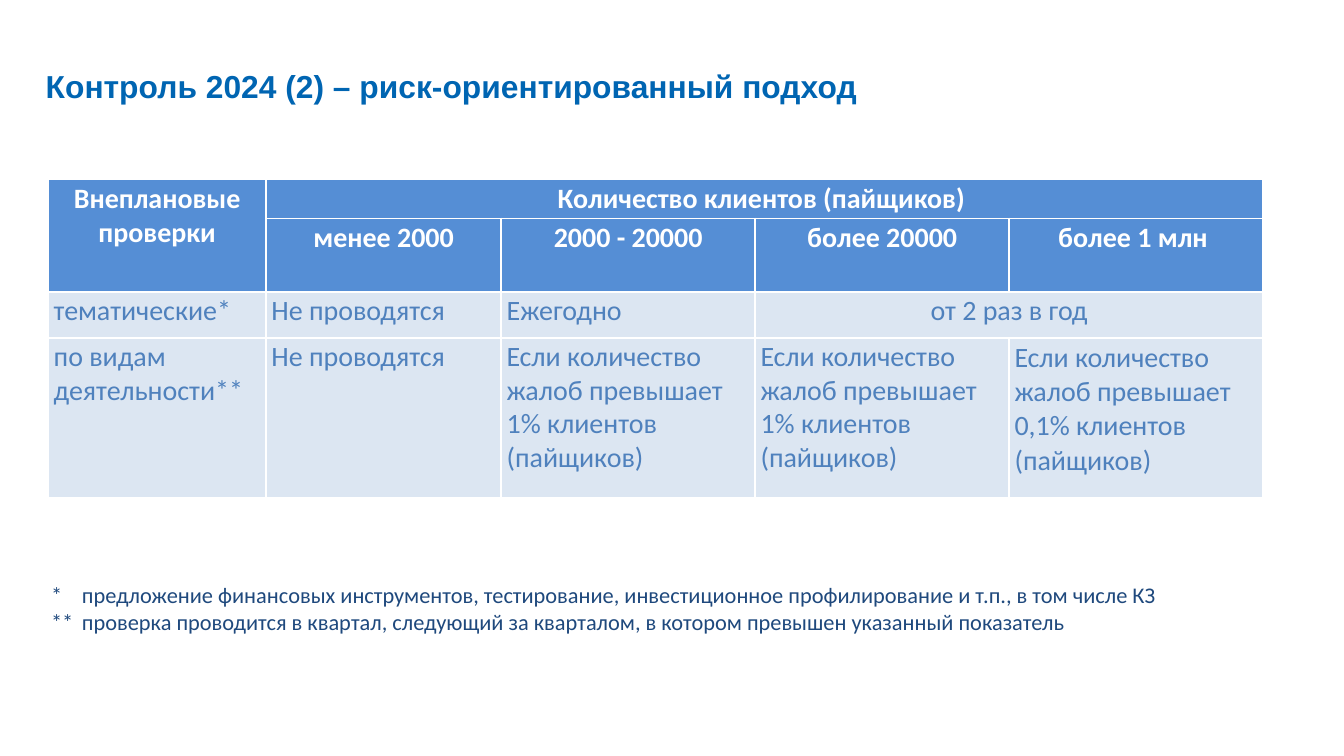
from dataclasses import dataclass

from lxml import etree
from pptx import Presentation
from pptx import util as u
from pptx.dml.color import RGBColor
from pptx.enum import text
from pptx.oxml import ns


@dataclass(frozen=True)
class Theme:
    title_font: str = "Arial"
    body_font: str = "Calibri"
    title_size: int = 17
    table_size: int = 15
    note_size: int = 12
    line_spacing: int = 18
    title_color: str = "0065B2"
    header_text: str = "FFFFFF"
    header_fill: str = "558ED5"
    body_text: str = "4F81BD"
    body_fill: str = "DCE6F2"
    border: str = "FFFFFF"
    note_color: str = "1F497D"


THEME = Theme()
COLUMNS = [1.62, 1.75, 1.89, 1.89, 1.89]
ROWS = [0.26, 0.31, 0.34, 1.19]
HEADER_ROWS = 2
COMPLAINTS = "Если количество жалоб превышает {} клиентов (пайщиков)"
CELLS = [
    ["Внеплановые проверки", "Количество клиентов (пайщиков) ", "", "", ""],
    ["", "менее 2000", "2000 - 20000", "более 20000", "более 1 млн "],
    ["тематические*", "Не проводятся", "Ежегодно", "от 2 раз в год", ""],
    ["по видам деятельности**", "Не проводятся", COMPLAINTS.format("1%"),
     COMPLAINTS.format("1%"), COMPLAINTS.format("0,1%")],
]
MERGES = [((0, 0), (1, 0)), ((0, 1), (0, 4)), ((2, 3), (2, 4))]
CENTERED_BODY = (2, 3)
NATURAL_SPACING = (3, 4)
NOTES = [
    "*\tпредложение финансовых инструментов, тестирование, инвестиционное "
    "профилирование и т.п., в том числе КЗ",
    "**\tпроверка проводится в квартал, следующий за кварталом, в котором "
    "превышен указанный показатель",
]


def style_runs(para, font, size, color, bold=False):
    for span in para.runs:
        span.font.name = font
        span.font.size = u.Pt(size)
        span.font.bold = bold
        span.font.color.rgb = RGBColor.from_string(color)


def add_title(page, title):
    box = page.shapes.title
    box.left, box.top = u.Inches(0.24), u.Inches(0.45)
    box.width, box.height = u.Inches(9.15), u.Inches(0.42)
    frame = box.text_frame
    frame.text = title
    frame.vertical_anchor = text.MSO_ANCHOR.TOP
    para = frame.paragraphs[0]
    para.alignment = text.PP_ALIGN.LEFT
    style_runs(para, THEME.title_font, THEME.title_size, THEME.title_color, True)


def set_borders(cell):
    properties = cell._tc.get_or_add_tcPr()
    for side in ("a:lnL", "a:lnR", "a:lnT", "a:lnB"):
        line = etree.SubElement(properties, ns.qn(side), w=str(u.Pt(1)))
        fill = etree.SubElement(line, ns.qn("a:solidFill"))
        etree.SubElement(fill, ns.qn("a:srgbClr"), val=THEME.border)


def format_cell(cell, row, column):
    header = row < HEADER_ROWS
    set_borders(cell)
    cell.fill.solid()
    cell.fill.fore_color.rgb = RGBColor.from_string(
        THEME.header_fill if header else THEME.body_fill)
    cell.margin_left = cell.margin_right = u.Inches(0.04)
    cell.margin_top = cell.margin_bottom = u.Inches(0.02)
    para = cell.text_frame.paragraphs[0]
    centered = header or (row, column) == CENTERED_BODY
    para.alignment = text.PP_ALIGN.CENTER if centered else text.PP_ALIGN.LEFT
    if not header and (row, column) != NATURAL_SPACING:
        para.line_spacing = u.Pt(THEME.line_spacing)
    para.font.size = u.Pt(THEME.table_size)
    style_runs(para, THEME.body_font, THEME.table_size,
               THEME.header_text if header else THEME.body_text, header)


def add_checks_table(page):
    table = page.shapes.add_table(
        len(ROWS), len(COLUMNS), u.Inches(0.36), u.Inches(1.33),
        u.Inches(sum(COLUMNS)), u.Inches(sum(ROWS))).table
    table.horz_banding = False
    for column, width in zip(table.columns, COLUMNS):
        column.width = u.Inches(width)
    for row, height in zip(table.rows, ROWS):
        row.height = u.Inches(height)
    for first, last in MERGES:
        table.cell(*first).merge(table.cell(*last))
    for row, labels in enumerate(CELLS):
        for column, label in enumerate(labels):
            cell = table.cell(row, column)
            if label:
                cell.text_frame.text = label
            format_cell(cell, row, column)


def add_footnotes(page):
    box = page.shapes.add_textbox(
        u.Inches(0.36), u.Inches(4.3), u.Inches(8.62), u.Inches(0.45))
    frame = box.text_frame
    frame.word_wrap = True
    frame.auto_size = text.MSO_AUTO_SIZE.SHAPE_TO_FIT_TEXT
    frame.vertical_anchor = text.MSO_ANCHOR.MIDDLE
    frame.margin_left = frame.margin_right = u.Inches(0.02)
    frame.margin_top = frame.margin_bottom = u.Inches(0.02)
    frame.text = "\n".join(NOTES)
    indent = u.Inches(0.23)
    for para in frame.paragraphs:
        properties = para._p.get_or_add_pPr()
        properties.set("marL", str(indent))
        properties.set("indent", str(-indent))
        style_runs(para, THEME.body_font, THEME.note_size, THEME.note_color)


def main():
    deck = Presentation()
    deck.slide_width = u.Inches(10)
    deck.slide_height = deck.slide_width * 9 // 16
    page = deck.slides.add_slide(deck.slide_layouts[5])
    add_title(page, "Контроль 2024 (2) – риск-ориентированный подход")
    add_checks_table(page)
    add_footnotes(page)
    deck.save("out.pptx")


if __name__ == "__main__":
    main()
